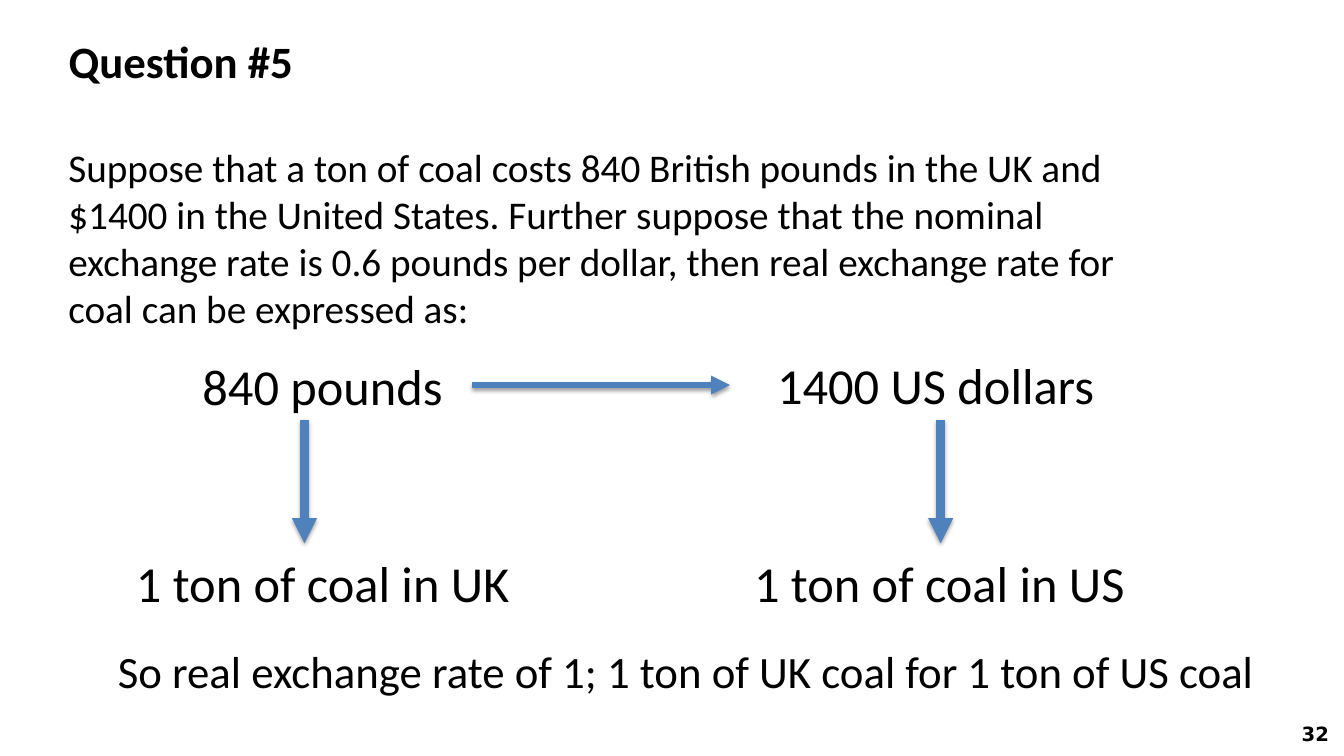
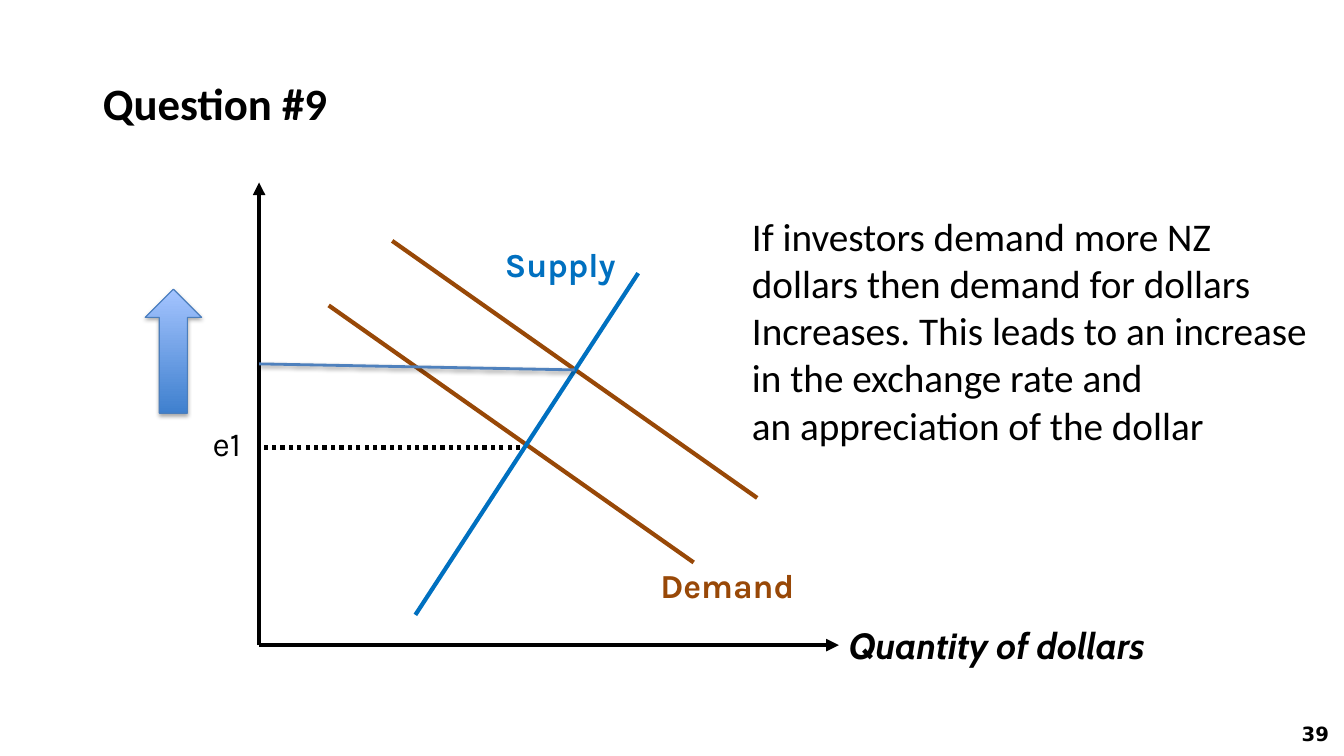
from dataclasses import dataclass

from lxml import etree
from pptx import Presentation, util as u
from pptx.dml.color import RGBColor
from pptx.enum import dml, shapes, text
from pptx.oxml.ns import qn

PX = 9144  # EMU in one px: 100 px to the inch
TITLE_ONLY = 5


@dataclass(frozen=True)
class Theme:
    ink: str = "000000"
    accent: str = "4F81BD"
    accent_edge: str = "4B7EBC"
    rise_low: str = "3F80CE"
    rise_high: str = "A4C4FF"
    demand: str = "984807"
    supply: str = "0070C0"
    body_font: str = "Calibri"
    curve_font: str = "Karla"
    axis_font: str = "Cabin"
    number_font: str = "DejaVu Sans"
    label_size: int = 36
    title_size: int = 32
    body_size: int = 28
    axis_size: int = 26
    curve_size: int = 24
    number_size: int = 14


THEME = Theme()


@dataclass(frozen=True)
class Box:
    left: int
    top: int
    width: int
    height: int

    def inner(self, x, y, width, height):
        return Box(self.left + x, self.top + y, width, height)

    def point(self, x, y):
        return self.left + x, self.top + y

    def emu(self):
        return [u.Emu(v * PX) for v in (self.left, self.top, self.width, self.height)]


def rgb(color):
    return RGBColor.from_string(color)


def write(frame, lines, size, font=THEME.body_font, color=THEME.ink,
          bold=False, italic=False, align=text.PP_ALIGN.LEFT):
    for i, line in enumerate(lines):
        paragraph = frame.paragraphs[0] if i == 0 else frame.add_paragraph()
        paragraph.alignment = align
        run = paragraph.add_run()
        run.text = line
        run.font.name = font
        run.font.size = u.Pt(size)
        run.font.bold = bold
        run.font.italic = italic
        run.font.color.rgb = rgb(color)


def add_text(slide, box, *lines, size=THEME.body_size, wrap=True, **style):
    frame = slide.shapes.add_textbox(*box.emu()).text_frame
    frame.word_wrap = wrap
    write(frame, lines, size, **style)


def set_shadow(item, opacity=None):
    """Give a soft shadow below the item, or none without an opacity."""
    properties = item._element.spPr
    for old in properties.findall(qn("a:effectLst")):
        properties.remove(old)
    effects = etree.SubElement(properties, qn("a:effectLst"))
    if opacity:
        shadow = etree.SubElement(effects, qn("a:outerShdw"), blurRad="40000",
                                  dist="20000", dir="5400000", rotWithShape="0")
        tint = etree.SubElement(shadow, qn("a:srgbClr"), val=THEME.ink)
        etree.SubElement(tint, qn("a:alpha"), val=str(opacity * 1000))


def add_line(slide, start, end, color, width=3, arrow=False, dash=None, shadow=None):
    ends = [u.Emu(v * PX) for v in (*start, *end)]
    line = slide.shapes.add_connector(shapes.MSO_CONNECTOR.STRAIGHT, *ends)
    line.line.color.rgb = rgb(color)
    line.line.width = u.Pt(width)
    if dash:
        line.line.dash_style = dash
    if arrow:
        etree.SubElement(line.line._get_or_add_ln(), qn("a:tailEnd"), type="triangle")
    set_shadow(line, shadow)


def add_question(deck, title, title_box, number):
    """Start a slide with its title and page number."""
    slide = deck.slides.add_slide(deck.slide_layouts[TITLE_ONLY])
    heading = slide.shapes.title
    heading.left, heading.top, heading.width, heading.height = title_box.emu()
    frame = heading.text_frame
    frame.word_wrap = True
    frame.auto_size = text.MSO_AUTO_SIZE.NONE
    frame.vertical_anchor = text.MSO_ANCHOR.TOP
    write(frame, [title], THEME.title_size, bold=True)
    frame.paragraphs[0].line_spacing = 0.9
    add_text(slide, Box(1262, 711, 66, 39), number, size=THEME.number_size,
             font=THEME.number_font, bold=True, align=text.PP_ALIGN.RIGHT)
    return slide


def price_flow(slide, box):
    """Two prices, each leading down to the coal it buys."""
    labels = [
        ("840 pounds", 66, 1, 261),
        ("1400 US dollars", 636, 0, 338),
        ("1 ton of coal in UK", 0, 197, 394),
        ("1 ton of coal in US", 613, 197, 391),
    ]
    for label, x, y, width in labels:
        add_text(slide, box.inner(x, y, width, 71), label,
                 size=THEME.label_size, wrap=False)
    arrows = [
        ((177, 71), (177, 193), 6),
        ((343, 36), (599, 36), 4.5),
        ((808, 71), (808, 193), 6),
    ]
    for start, end, width in arrows:
        add_line(slide, box.point(*start), box.point(*end), THEME.accent,
                 width, arrow=True, shadow=38)


def market_graph(slide, box):
    """Supply and two demand curves; the box spans the two axes."""
    curve_text = dict(size=THEME.curve_size, font=THEME.curve_font, wrap=False)
    add_text(slide, box.inner(388, 375, 161, 50), "Demand",
             color=THEME.demand, bold=True, **curve_text)
    add_text(slide, box.inner(234, 56, 135, 50), "Supply",
             color=THEME.supply, bold=True, **curve_text)
    add_text(slide, box.inner(-56, 234, 56, 50), "e1", **curve_text)
    add_text(slide, box.inner(box.width, box.height - 27, 336, 54),
             "Quantity of dollars", size=THEME.axis_size, font=THEME.axis_font,
             bold=True, italic=True)

    add_line(slide, box.point(259, 263), box.point(3, 263), THEME.ink,
             dash=dml.MSO_LINE.ROUND_DOT)
    for shift_x, shift_y in ((0, 0), (63, -64)):
        add_line(slide, box.point(69 + shift_x, 122 + shift_y),
                 box.point(431 + shift_x, 377 + shift_y), THEME.demand)
    add_line(slide, box.point(376, 90), box.point(155, 429), THEME.supply)
    origin = box.point(0, box.height)
    for axis_end in ((0, 0), (box.width, box.height)):
        add_line(slide, origin, box.point(*axis_end), THEME.ink, arrow=True)
    add_line(slide, box.point(313, 186), box.point(0, 180), THEME.accent, 2, shadow=38)
    rate_rise(slide, box.inner(-113, 106, 56, 123))


def rate_rise(slide, box):
    rise = slide.shapes.add_shape(shapes.MSO_SHAPE.UP_ARROW, *box.emu())
    rise.fill.gradient()
    rise.fill.gradient_angle = 90
    for stop, color in zip(rise.fill.gradient_stops, (THEME.rise_low, THEME.rise_high)):
        stop.color.rgb = rgb(color)
    rise.line.color.rgb = rgb(THEME.accent_edge)
    rise.line.width = u.Pt(0.75)
    set_shadow(rise, 35)


def coal_question(deck):
    slide = add_question(deck, "Question #5", Box(58, 34, 735, 101), "32")
    add_text(slide, Box(58, 137, 1117, 246),
             "Suppose that a ton of coal costs 840 British pounds in the UK and "
             "$1400 in the United States. Further suppose that the nominal "
             "exchange rate is 0.6 pounds per dollar, then real exchange rate "
             "for coal can be expressed as:")
    price_flow(slide, Box(125, 346, 1004, 268))
    add_text(slide, Box(107, 634, 1156, 64),
             "So real exchange rate of 1; 1 ton of UK coal for 1 ton of US coal",
             size=THEME.title_size)


def dollar_question(deck):
    slide = add_question(deck, "Question #9", Box(92, 76, 608, 125), "39")
    market_graph(slide, Box(257, 181, 575, 459))
    add_text(slide, Box(736, 206, 586, 246),
             "If investors demand more NZ",
             "dollars then demand for dollars",
             "Increases. This leads to an increase",
             "in the exchange rate and",
             "an appreciation of the dollar", wrap=False)


def main():
    deck = Presentation()
    deck.slide_width, deck.slide_height = u.Emu(1333 * PX), u.Emu(750 * PX)
    coal_question(deck)
    dollar_question(deck)
    deck.save("out.pptx")


if __name__ == "__main__":
    main()
